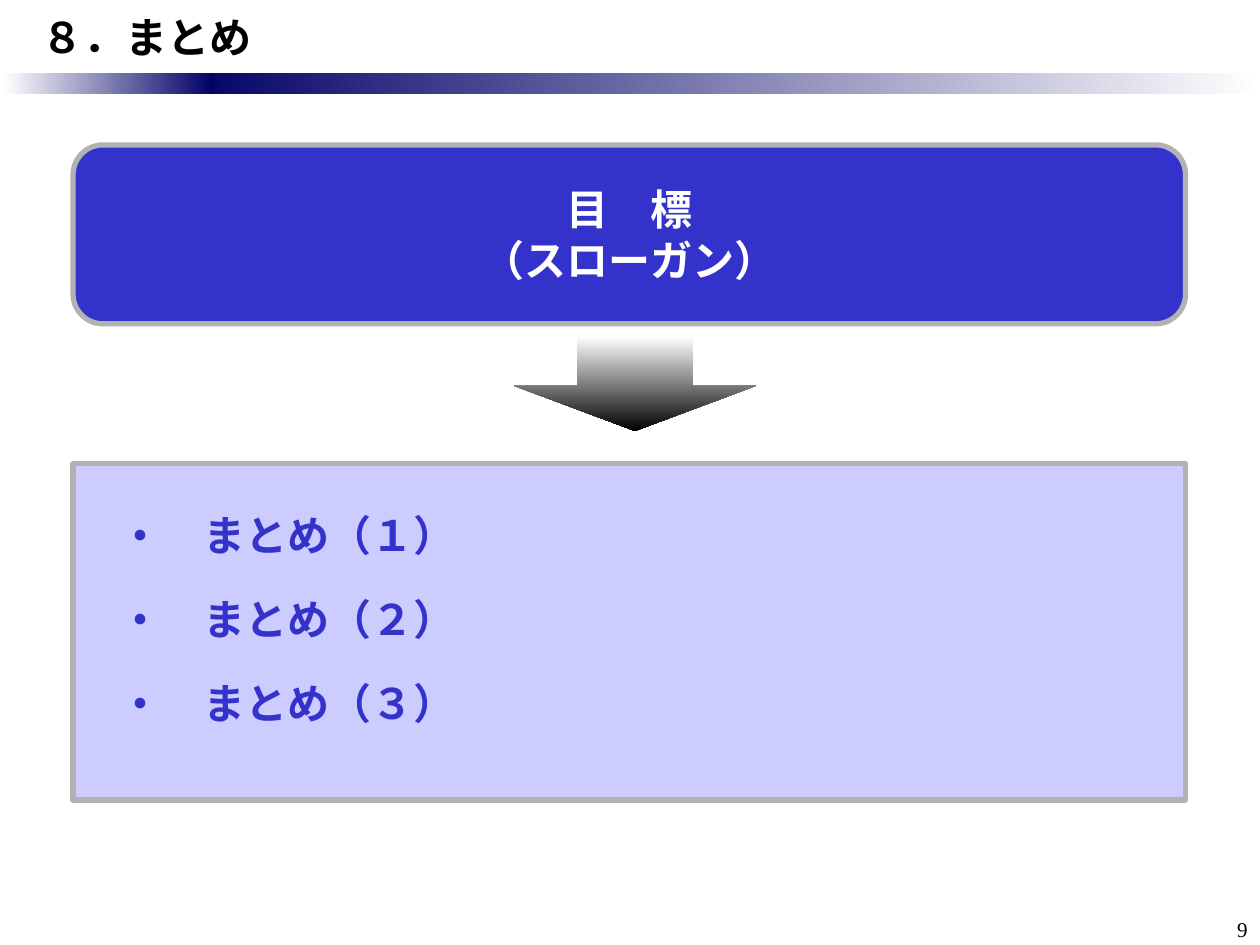
import dataclasses
import typing

import pptx
import pptx.dml.color
import pptx.enum.shapes
import pptx.enum.text
import pptx.oxml.ns
import pptx.util

Inches = pptx.util.Inches
Pt = pptx.util.Pt
Kind = pptx.enum.shapes.MSO_SHAPE
Align = pptx.enum.text.PP_ALIGN
Anchor = pptx.enum.text.MSO_ANCHOR
SANS = "Noto Sans CJK JP"


@dataclasses.dataclass
class Box:
    left: float
    top: float
    width: float
    height: float
    kind: Kind = Kind.RECTANGLE
    adjust: tuple[float, ...] = ()


@dataclasses.dataclass
class Text:
    lines: list[str]
    color: str
    align: Align = Align.LEFT
    anchor: Anchor = Anchor.MIDDLE
    inset: tuple[float, float] = (0.1, 0.05)
    size: float = 24
    font: str = SANS
    bold: bool = True
    pitch: float = 28.6
    after: float = 0


def rgb(code: str) -> pptx.dml.color.RGBColor:
    return pptx.dml.color.RGBColor.from_string(code)


def place(slide: typing.Any, box: Box) -> typing.Any:
    shape = slide.shapes.add_shape(
        box.kind, Inches(box.left), Inches(box.top), Inches(box.width), Inches(box.height)
    )
    shape.shadow.inherit = False
    for index, value in enumerate(box.adjust):
        shape.adjustments[index] = value
    return shape


def fade(slide: typing.Any, box: Box, start: str, end: str, angle: float = 0) -> None:
    shape = place(slide, box)
    shape.line.fill.background()
    shape.fill.gradient()
    shape.fill.gradient_angle = angle
    for stop, code in zip(shape.fill.gradient_stops, (start, end)):
        stop.color.rgb = rgb(code)


def panel(slide: typing.Any, box: Box, fill: str, text: Text) -> None:
    shape = place(slide, box)
    shape.fill.solid()
    shape.fill.fore_color.rgb = rgb(fill)
    shape.line.color.rgb = rgb("B2B2B2")
    shape.line.width = Pt(3)
    write(shape, text)


def label(slide: typing.Any, box: Box, text: Text) -> None:
    shape = slide.shapes.add_textbox(
        Inches(box.left), Inches(box.top), Inches(box.width), Inches(box.height)
    )
    write(shape, text)


def write(shape: typing.Any, text: Text) -> None:
    frame = shape.text_frame
    frame.word_wrap = True
    frame.vertical_anchor = text.anchor
    frame.margin_left, frame.margin_top = map(Inches, text.inset)
    frame.margin_right, frame.margin_bottom = Inches(0.1), Inches(0.05)
    for index, line in enumerate(text.lines):
        para = frame.add_paragraph() if index else frame.paragraphs[0]
        para.alignment = text.align
        para.line_spacing = Pt(text.pitch)
        para.space_after = Pt(text.after)
        run = para.add_run()
        run.text = line
        font = run.font
        font.size, font.bold, font.name = Pt(text.size), text.bold, text.font
        font.color.rgb = rgb(text.color)
        east = run._r.get_or_add_rPr().makeelement(
            pptx.oxml.ns.qn("a:ea"), {"typeface": text.font}
        )
        run._r.rPr.find(pptx.oxml.ns.qn("a:latin")).addnext(east)


def main() -> None:
    """Build the summary slide and save it."""
    deck = pptx.Presentation()
    deck.slide_width, deck.slide_height = Inches(10), Inches(7.5)
    slide = deck.slides.add_slide(deck.slide_layouts[6])

    fade(slide, Box(1.42, 0.58, 8.58, 0.17), "000066", "FFFFFF")
    fade(slide, Box(0.03, 0.58, 1.67, 0.17), "FFFFFF", "000066")
    label(slide, Box(0, 0, 10, 0.58), Text(["８．まとめ"], "000000", inset=(0.33, 0.05)))
    panel(
        slide,
        Box(0.58, 1.15, 8.83, 1.42, Kind.ROUNDED_RECTANGLE, (0.167,)),
        "3333CC",
        Text(["目　標", "（スローガン）"], "FFFFFF", Align.CENTER),
    )
    arrow = Box(4.08, 2.67, 1.92, 0.75, Kind.DOWN_ARROW, (0.476, 0.477))
    fade(slide, arrow, "FFFFFF", "000000", 270)
    points = [f"・　まとめ（{number}）" for number in "１２３"]
    panel(
        slide,
        Box(0.58, 3.68, 8.83, 2.67),
        "CCCCFF",
        Text(points, "3333CC", anchor=Anchor.TOP, inset=(0.37, 0.37), after=19.2),
    )
    label(
        slide,
        Box(9.42, 7.25, 0.58, 0.25),
        Text(["9"], "000000", Align.RIGHT, size=12, font="Times New Roman", bold=False, pitch=14),
    )
    deck.save("out.pptx")


if __name__ == "__main__":
    main()
